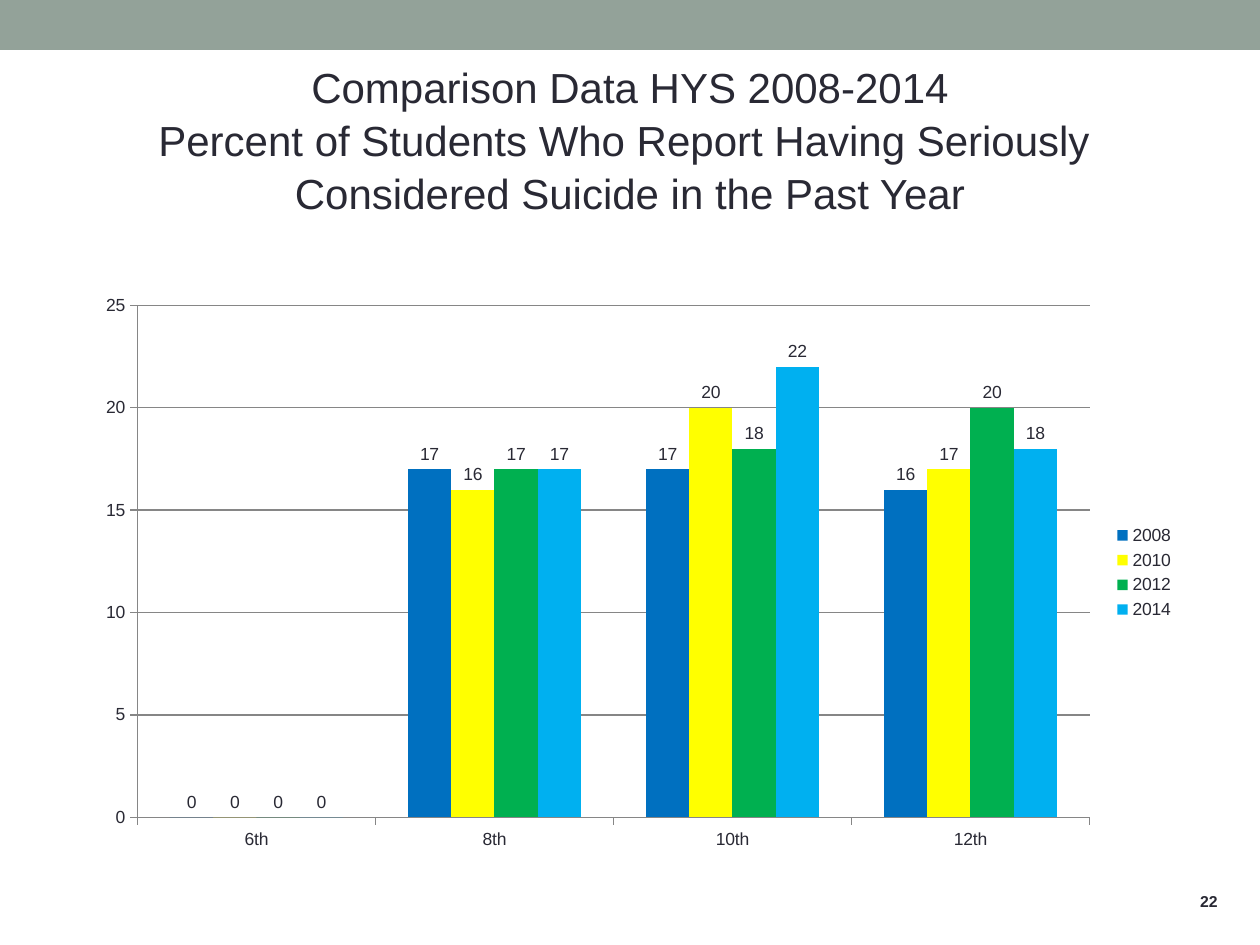
from dataclasses import dataclass

import pptx
import pptx.chart.data
import pptx.dml.color
import pptx.enum.chart
import pptx.enum.shapes
import pptx.enum.text
import pptx.util

RGB = pptx.dml.color.RGBColor
INK = RGB(0x29, 0x29, 0x34)
SAGE = RGB(0x93, 0xA2, 0x99)
GRAY = RGB(0x86, 0x86, 0x86)
BLUE = RGB(0x00, 0x70, 0xC0)
GOLD = RGB(0xFF, 0xFF, 0x00)
GREEN = RGB(0x00, 0xB0, 0x50)
SKY = RGB(0x00, 0xB0, 0xF0)
FACE = "Arial"
EMU = 914400 / 126  # one px


@dataclass
class Box:
    x: int
    y: int
    w: int
    h: int

    def emu(self) -> list[int]:
        return [round(n * EMU) for n in (self.x, self.y, self.w, self.h)]


@dataclass
class Year:
    name: str
    vals: tuple[int, ...]
    color: RGB


GRADES = ("6th", "8th", "10th", "12th")
YEARS = (
    Year("2008", (0, 17, 17, 16), BLUE),
    Year("2010", (0, 16, 20, 17), GOLD),
    Year("2012", (0, 17, 18, 20), GREEN),
    Year("2014", (0, 17, 22, 18), SKY),
)
TITLE = (
    "Comparison Data HYS 2008-2014\n"
    "Percent of Students Who Report Having Seriously \n"
    "Considered Suicide in the Past Year"
)


def style(font, size: int, bold: bool = False) -> None:
    font.name = FACE
    font.size = pptx.util.Pt(size)
    font.bold = bold
    font.color.rgb = INK


def write(shape, box: Box, text: str, size: int, align, anchor, bold: bool = False) -> None:
    shape.left, shape.top, shape.width, shape.height = box.emu()
    frame = shape.text_frame
    frame.text = text
    frame.vertical_anchor = anchor
    for para in frame.paragraphs:
        para.alignment = align
        for run in para.runs:
            style(run.font, size, bold)


def draw_chart(slide, box: Box) -> None:
    data = pptx.chart.data.CategoryChartData()
    data.categories = GRADES
    for year in YEARS:
        data.add_series(year.name, year.vals)
    kind = pptx.enum.chart.XL_CHART_TYPE.COLUMN_CLUSTERED
    chart = slide.shapes.add_chart(kind, *box.emu(), data).chart
    style(chart.font, 10)
    chart.has_title = False

    # Legend
    chart.has_legend = True
    chart.legend.position = pptx.enum.chart.XL_LEGEND_POSITION.RIGHT
    chart.legend.include_in_layout = False

    # Axes and grid
    for axis in (chart.category_axis, chart.value_axis):
        axis.major_tick_mark = pptx.enum.chart.XL_TICK_MARK.OUTSIDE
        axis.format.line.color.rgb = GRAY
    scale = chart.value_axis
    scale.minimum_scale, scale.maximum_scale, scale.major_unit = 0, 25, 5
    scale.has_major_gridlines = True
    scale.major_gridlines.format.line.color.rgb = GRAY

    # Columns and their values
    plot = chart.plots[0]
    plot.gap_width = 150
    plot.overlap = 0
    plot.vary_by_categories = False
    for bars, year in zip(plot.series, YEARS):
        bars.format.fill.solid()
        bars.format.fill.fore_color.rgb = year.color
        bars.data_labels.show_value = True
        bars.data_labels.position = pptx.enum.chart.XL_LABEL_POSITION.OUTSIDE_END


def main() -> None:
    deck = pptx.Presentation()
    deck.slide_width, deck.slide_height = Box(0, 0, 1260, 945).emu()[2:]
    slide = deck.slides.add_slide(deck.slide_layouts[5])
    align = pptx.enum.text.PP_ALIGN
    anchor = pptx.enum.text.MSO_ANCHOR

    # Top band
    rect = pptx.enum.shapes.MSO_SHAPE.RECTANGLE
    band = slide.shapes.add_shape(rect, *Box(0, 0, 1260, 50).emu())
    band.shadow.inherit = False
    band.fill.solid()
    band.fill.fore_color.rgb = SAGE
    band.line.fill.background()

    # Title
    title = slide.shapes.title
    write(title, Box(141, 53, 978, 165), TITLE, 24, align.CENTER, anchor.TOP)
    title.text_frame.word_wrap = False
    for para in title.text_frame.paragraphs:
        para.line_spacing = 1.05
        para.space_before = pptx.util.Pt(0)

    draw_chart(slide, Box(84, 284, 1103, 577))

    # Page number
    box = Box(930, 892, 300, 19)
    page = slide.shapes.add_textbox(*box.emu())
    write(page, box, "22", 9, align.RIGHT, anchor.MIDDLE, True)
    page.text_frame.word_wrap = True

    deck.save("out.pptx")


if __name__ == "__main__":
    main()
